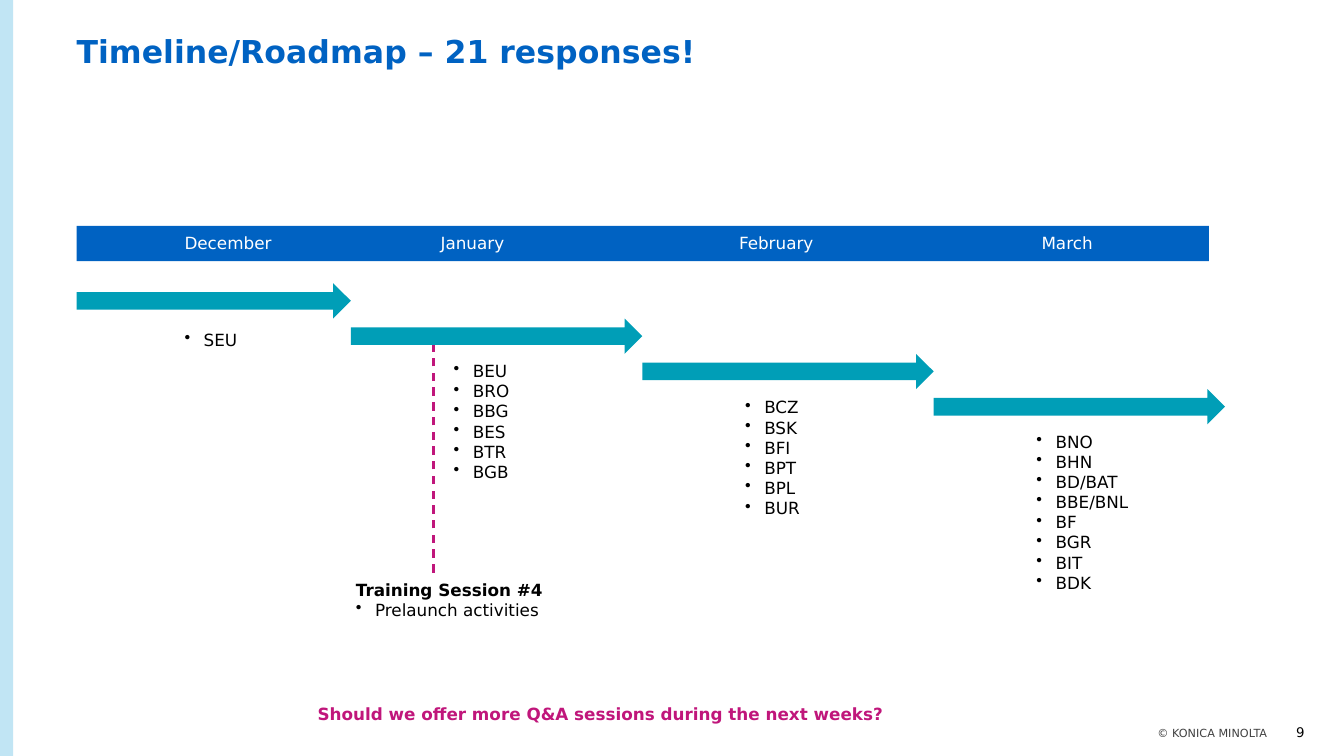
from lxml.etree import SubElement
from pptx import Presentation
from pptx.dml.color import RGBColor
from pptx.enum.dml import MSO_LINE
from pptx.enum.shapes import MSO_CONNECTOR, MSO_SHAPE
from pptx.enum.text import MSO_ANCHOR, PP_ALIGN
from pptx.oxml.ns import qn
from pptx.util import Inches, Pt

FONT = "DejaVu Sans"
BLUE, TEAL, PINK = "0062C2", "009EB7", "C0167B"
BLACK, WHITE, GREY, PALE_BLUE = "000000", "FFFFFF", "404040", "C1E5F4"
BULLET_INDENT = Inches(0.19)
ARROW_TOP, ARROW_STEP, BAR_HEIGHT = 2.81, 0.35, 0.35
LINE_HEIGHT = 0.2

# month, label left, arrow left, arrow width, list left, list top, countries
MONTHS = [
    ("December", 1.83, 0.76, 2.72, 1.83, 3.27, ["SEU"]),
    ("January", 4.37, 3.48, 2.89, 4.5, 3.58,
     ["BEU", "BRO", "BBG", "BES", "BTR", "BGB"]),
    ("February", 7.33, 6.37, 2.89, 7.39, 3.94,
     ["BCZ", "BSK", "BFI", "BPT", "BPL", "BUR"]),
    ("March", 10.33, 9.26, 2.89, 10.28, 4.28,
     ["BNO", "BHN", "BD/BAT", "BBE/BNL", "BF", "BGR", "BIT", "BDK"]),
]


def color(value):
    return RGBColor.from_string(value)


def set_frame(box, anchor=MSO_ANCHOR.TOP):
    frame = box.text_frame
    frame.margin_left = frame.margin_right = 0
    frame.margin_top = frame.margin_bottom = 0
    frame.word_wrap = True
    frame.vertical_anchor = anchor
    return frame


def write(para, text, size=12, ink=BLACK, bold=False, bullet=False,
          align=PP_ALIGN.LEFT):
    para.text = text
    para.alignment = align
    if bullet:
        properties = para._p.get_or_add_pPr()
        properties.set("marL", str(BULLET_INDENT))
        properties.set("indent", str(-BULLET_INDENT))
        SubElement(properties, qn("a:buChar")).set("char", "•")
    para.font.name = FONT
    para.font.size = Pt(size)
    para.font.bold = bold
    para.font.color.rgb = color(ink)


def add_text(page, left, top, width, height, text,
             anchor=MSO_ANCHOR.TOP, **style):
    box = page.shapes.add_textbox(
        Inches(left), Inches(top), Inches(width), Inches(height))
    frame = set_frame(box, anchor)
    write(frame.paragraphs[0], text, **style)
    return frame


def add_bullets(page, left, top, items):
    first, *others = items
    frame = add_text(page, left, top, 2.05, LINE_HEIGHT * len(items), first,
                     bullet=True)
    for item in others:
        write(frame.add_paragraph(), item, bullet=True)


def add_block(page, kind, left, top, width, height, fill):
    block = page.shapes.add_shape(
        kind, Inches(left), Inches(top), Inches(width), Inches(height))
    block.shadow.inherit = False
    block.fill.solid()
    block.fill.fore_color.rgb = color(fill)
    block.line.fill.background()


def add_dashed_line(page, left, start, end):
    line = page.shapes.add_connector(
        MSO_CONNECTOR.STRAIGHT,
        Inches(left), Inches(start), Inches(left), Inches(end))
    line.line.color.rgb = color(PINK)
    line.line.width = Pt(1.5)
    line.line.dash_style = MSO_LINE.DASH
    SubElement(line._element.spPr, qn("a:effectLst"))


def set_title(page, text):
    title = page.shapes.title
    title.left, title.top = Inches(0.76), Inches(0.36)
    title.width, title.height = Inches(10.61), Inches(0.35)
    para = set_frame(title).paragraphs[0]
    para.line_spacing = 0.9
    write(para, text, size=22.5, ink=BLUE, bold=True)


def add_footer(page):
    add_text(page, 12.57, 7.18, 0.37, 0.16, "9", MSO_ANCHOR.BOTTOM,
             size=9.5, align=PP_ALIGN.RIGHT)
    add_text(page, 7.45, 7.21, 5.12, 0.13, "© KONICA MINOLTA",
             MSO_ANCHOR.BOTTOM, size=8, ink=GREY, align=PP_ALIGN.RIGHT)


def add_timeline(page):
    add_block(page, MSO_SHAPE.RECTANGLE, 0.76, 2.24, 11.23, BAR_HEIGHT, BLUE)
    for row, month in enumerate(MONTHS):
        name, label_left, left, width, list_left, list_top, countries = month
        add_text(page, label_left, 2.31, 1.65, LINE_HEIGHT, name, ink=WHITE)
        add_block(page, MSO_SHAPE.RIGHT_ARROW, left,
                  ARROW_TOP + row * ARROW_STEP, width, BAR_HEIGHT, TEAL)
        add_bullets(page, list_left, list_top, countries)


def add_training(page):
    add_dashed_line(page, 4.3, 5.68, 3.42)
    frame = add_text(page, 3.53, 5.75, 1.95, 0.4, "Training Session #4",
                     bold=True)
    write(frame.add_paragraph(), "Prelaunch activities", bullet=True)


def main():
    """Build the roadmap slide and save it."""
    deck = Presentation()
    deck.slide_width, deck.slide_height = Inches(13.33), Inches(7.5)
    page = deck.slides.add_slide(deck.slide_layouts[5])
    add_block(page, MSO_SHAPE.RECTANGLE, 0, 0, 0.13, 7.5, PALE_BLUE)
    set_title(page, "Timeline/Roadmap – 21 responses!")
    add_footer(page)
    add_timeline(page)
    add_training(page)
    add_text(page, 3.15, 6.98, 7.03, LINE_HEIGHT,
             "Should we offer more Q&A sessions during the next weeks?",
             ink=PINK, bold=True)
    deck.save("out.pptx")


if __name__ == "__main__":
    main()
